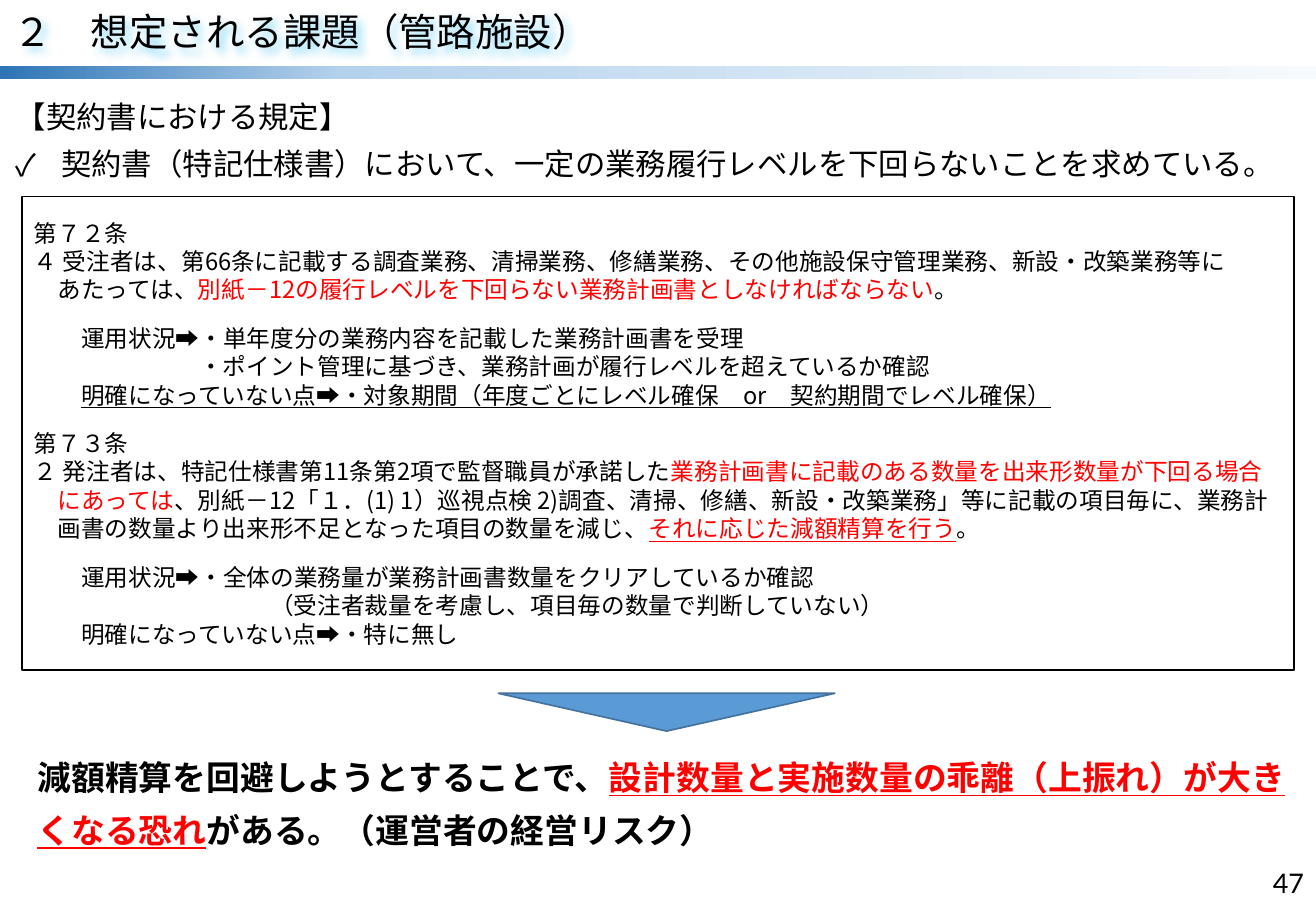
from copy import deepcopy

from lxml import etree
from pptx import Presentation
from pptx.dml.color import RGBColor
from pptx.enum import shapes, text
from pptx.oxml.ns import qn
from pptx.util import Pt

FONT = "Noto Sans CJK JP"
COLOURS = {
    "black": "000000", "red": "FF0000", "glow": "00B0F0",
    "arrow": "5B9BD5", "arrow_edge": "43739E",
}
BAND_STOPS = [(0, "2E75B6"), (0.26, "B5D2EC"), (1, "F7FAFD")]

TITLE = [{"runs": [("２　想定される課題（管路施設）", "")]}]
INTRO = [
    {"runs": [("【契約書における規定】", "")]},
    {"runs": [("契約書（特記仕様書）において、一定の業務履行レベルを下回らないことを求めている。", "")],
     "left": 27, "hang": 27, "bullet": "✓"},
]
ARTICLES = [
    {"runs": [("第７２条", "")]},
    {"runs": [
        ("４ 受注者は、第66条に記載する調査業務、清掃業務、修繕業務、その他施設保守管理業務、新設・改築業務等に　　あたっては、", ""),
        ("別紙－12の履行レベルを下回らない業務計画書としなければならない", "red"),
        ("。", "")], "left": 14, "hang": 14},
    {"runs": [("運用状況➡・単年度分の業務内容を記載した業務計画書を受理", "")], "left": 28, "before": 12},
    {"runs": [("・ポイント管理に基づき、業務計画が履行レベルを超えているか確認", "")], "left": 98},
    {"runs": [("明確になっていない点➡・対象期間（年度ごとにレベル確保　or　契約期間でレベル確保）", "line")], "left": 28},
    {"runs": [("第７３条", "")], "before": 12},
    {"runs": [
        ("２ 発注者は、特記仕様書第11条第2項で監督職員が承諾した", ""),
        ("業務計画書に記載のある数量を出来形数量が下回る場合にあっては", "red"),
        ("、別紙－12「１．(1) 1）巡視点検 2)調査、清掃、修繕、新設・改築業務」等に記載の項目毎に、業務計画書の数量より出来形不足となった項目の数量を減じ、", ""),
        ("それに応じた減額精算を行う", "red line"),
        ("。", "")], "left": 14, "hang": 14},
    {"runs": [("運用状況➡・全体の業務量が業務計画書数量をクリアしているか確認", "")], "left": 28, "before": 12},
    {"runs": [("（受注者裁量を考慮し、項目毎の数量で判断していない）", "")], "left": 140},
    {"runs": [("明確になっていない点➡・特に無し", "")], "left": 28},
]
CONCLUSION = [{"runs": [
    ("減額精算を回避しようとすることで、", ""),
    ("設計数量と実施数量の乖離（上振れ）が大きくなる恐れ", "red line"),
    ("がある。（運営者の経営リスク）", "")]}]
PAGE_NUMBER = [{"runs": [("47", "")]}]


def colour(name):
    return RGBColor.from_string(COLOURS[name])


def add_box(page, kind, left, top, width, height):
    box = page.shapes.add_shape(kind, Pt(left), Pt(top), Pt(width), Pt(height))
    box.shadow.inherit = False
    box.fill.background()
    box.line.fill.background()
    return box


def add_text_box(page, left, top, width, height):
    return page.shapes.add_textbox(Pt(left), Pt(top), Pt(width), Pt(height))


def write(box, content, size, spacing=None, bold=False, font=FONT,
          align=text.PP_ALIGN.LEFT, anchor=text.MSO_ANCHOR.TOP):
    frame = box.text_frame
    frame.word_wrap = True
    frame.vertical_anchor = anchor
    for index, item in enumerate(content):
        para = frame.add_paragraph() if index else frame.paragraphs[0]
        para.alignment = align
        para.line_spacing = spacing
        para.space_before = Pt(item.get("before", 0))
        props = para._p.get_or_add_pPr()
        props.set("marL", str(Pt(item.get("left", 0))))
        props.set("indent", str(-Pt(item.get("hang", 0))))
        if "bullet" in item:
            etree.SubElement(props, qn("a:buFont")).set("typeface", font)
            etree.SubElement(props, qn("a:buChar")).set("char", item["bullet"])
        for words, style in item["runs"]:
            span = para.add_run()
            span.text = words
            span.font.size = Pt(size)
            span.font.name = font
            span.font.bold = bold
            span.font.underline = "line" in style
            span.font.color.rgb = colour("red" if "red" in style else "black")
            etree.SubElement(span._r.get_or_add_rPr(), qn("a:ea")).set("typeface", font)


def add_band(page):
    band = add_box(page, shapes.MSO_SHAPE.RECTANGLE, 0, 39, 780, 8)
    band.fill.gradient()
    band.fill.gradient_angle = 0
    stop_list = band._element.spPr.find(".//" + qn("a:gsLst"))
    stop_list.append(deepcopy(stop_list[0]))
    for stop, (position, value) in zip(band.fill.gradient_stops, BAND_STOPS):
        stop.position = position
        stop.color.rgb = RGBColor.from_string(value)


def add_title(page):
    title = add_box(page, shapes.MSO_SHAPE.ROUNDED_RECTANGLE, 6, 8, 748, 26.5)
    title.adjustments[0] = 0.04
    frame = title.text_frame
    frame.margin_left = frame.margin_right = Pt(2)
    frame.margin_top = frame.margin_bottom = Pt(2)
    write(title, TITLE, 22.8, Pt(21.9))
    effects = title._element.spPr.find(qn("a:effectLst"))
    shadow = etree.SubElement(effects, qn("a:outerShdw"), blurRad=str(Pt(5)),
                              dist=str(Pt(3)), dir="2700000", algn="tl", rotWithShape="0")
    tint = etree.SubElement(shadow, qn("a:srgbClr"), val=COLOURS["glow"])
    etree.SubElement(tint, qn("a:alpha"), val="40000")


def main():
    deck = Presentation()
    deck.slide_width, deck.slide_height = Pt(780), Pt(540)
    page = deck.slides.add_slide(deck.slide_layouts[6])

    add_band(page)
    write(add_text_box(page, 604.5, 509, 175.5, 28.8), PAGE_NUMBER, 16, font="Lato",
          align=text.PP_ALIGN.RIGHT, anchor=text.MSO_ANCHOR.MIDDLE)
    add_title(page)
    write(add_text_box(page, 2.2, 48.2, 786, 60), INTRO, 18, 1.3)
    write(add_text_box(page, 15.1, 437.8, 754, 65.5), CONCLUSION, 20, 1.3, bold=True)

    articles = add_box(page, shapes.MSO_SHAPE.RECTANGLE, 13, 116.4, 754, 280.6)
    articles.line.color.rgb = colour("black")
    articles.line.width = Pt(1)
    write(articles, ARTICLES, 14, anchor=text.MSO_ANCHOR.MIDDLE)

    arrow = add_box(page, shapes.MSO_SHAPE.FLOWCHART_MERGE, 295.4, 411, 199.4, 22.4)
    arrow.fill.solid()
    arrow.fill.fore_color.rgb = colour("arrow")
    arrow.line.color.rgb = colour("arrow_edge")
    arrow.line.width = Pt(1)

    deck.save("out.pptx")


if __name__ == "__main__":
    main()
